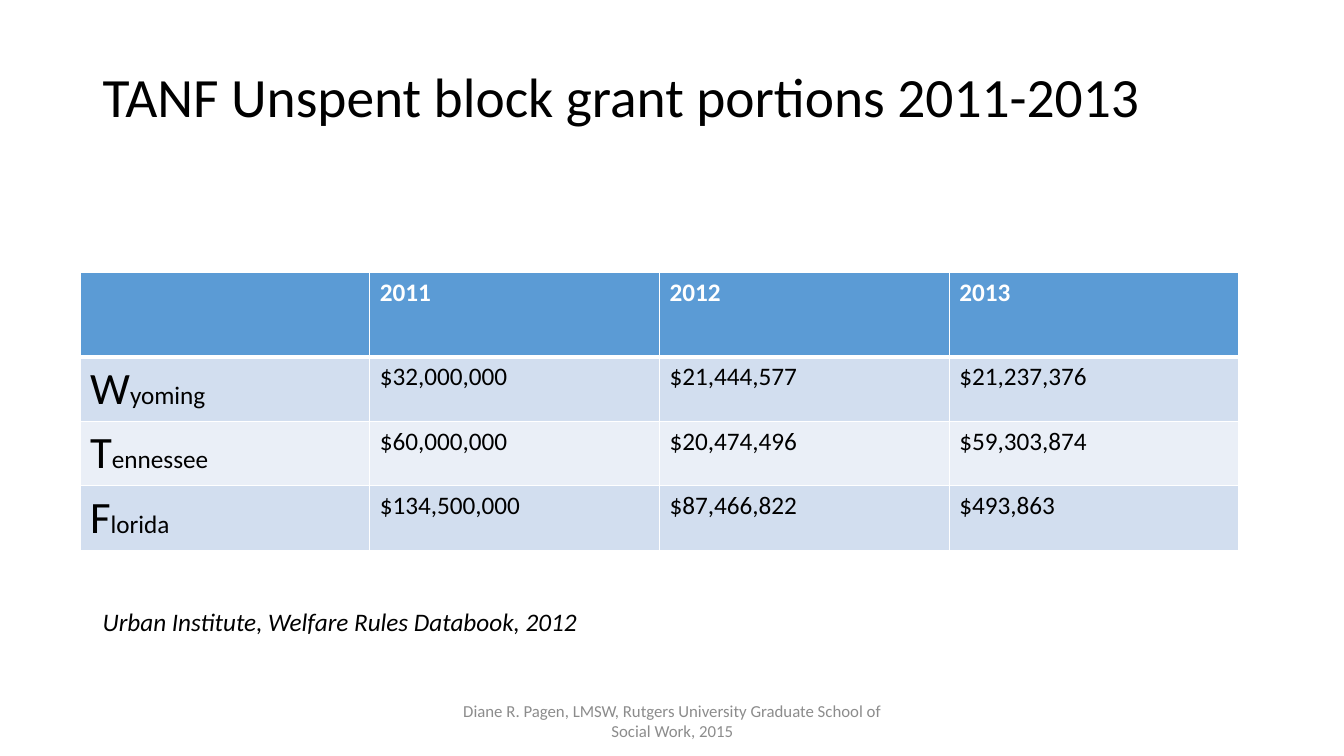
from dataclasses import dataclass

from lxml import etree
from pptx import Presentation
from pptx import util as u
from pptx.dml.color import RGBColor
from pptx.enum import text
from pptx.oxml import ns

SLIDE_WIDTH, SLIDE_HEIGHT = u.Inches(13.33), u.Inches(7.5)


@dataclass(frozen=True)
class Theme:
    font: str = "Calibri"
    ink: str = "000000"
    white: str = "FFFFFF"
    muted: str = "8C8C8C"
    header: str = "5B9BD5"
    bands: tuple = ("D2DEEF", "EAEFF7")
    title_size: float = 39.6
    initial_size: int = 32
    body_size: int = 18
    footer_size: int = 12
    thin: int = 1
    thick: int = 3


THEME = Theme()
YEARS = ("2011", "2012", "2013")
UNSPENT = {
    "Wyoming": ("$32,000,000", "$21,444,577", "$21,237,376"),
    "Tennessee": ("$60,000,000", "$20,474,496", "$59,303,874"),
    "Florida": ("$134,500,000", "$87,466,822", "$493,863"),
}
HEADER_HEIGHT, STATE_HEIGHT = u.Inches(0.84), u.Inches(0.64)


def place(left, top, width, height):
    """Turn shares of the slide into lengths."""
    return (int(left * SLIDE_WIDTH), int(top * SLIDE_HEIGHT),
            int(width * SLIDE_WIDTH), int(height * SLIDE_HEIGHT))


def set_all(target, values):
    for name, value in values.items():
        setattr(target, name, value)


def add_run(paragraph, words, size, color=THEME.ink, **styles):
    run = paragraph.add_run()
    run.text = words
    set_all(run.font, {"name": THEME.font, "size": u.Pt(size), **styles})
    run.font.color.rgb = RGBColor.from_string(color)


def add_text(slide, area, words, size, color=THEME.ink, frame=None,
             layout=None, **styles):
    """Add a one-paragraph box; frame and layout hold format values."""
    text_frame = slide.shapes.add_textbox(*place(*area)).text_frame
    set_all(text_frame, {"word_wrap": True, **(frame or {})})
    paragraph = text_frame.paragraphs[0]
    set_all(paragraph, layout or {})
    add_run(paragraph, words, size, color, **styles)


def add_borders(cell, top, bottom):
    widths = {"L": THEME.thin, "R": THEME.thin, "T": top, "B": bottom}
    properties = cell._tc.get_or_add_tcPr()
    for side, width in widths.items():
        line = etree.SubElement(properties, ns.qn(f"a:ln{side}"),
                                w=str(u.Pt(width)))
        fill = etree.SubElement(line, ns.qn("a:solidFill"))
        etree.SubElement(fill, ns.qn("a:srgbClr"), val=THEME.white)


def style_cell(cell, row):
    add_borders(cell, THEME.thick if row == 1 else THEME.thin,
                THEME.thick if row == 0 else THEME.thin)
    color = THEME.bands[(row - 1) % 2] if row else THEME.header
    cell.fill.solid()
    cell.fill.fore_color.rgb = RGBColor.from_string(color)


def write_cell(cell, words, row, column):
    """Write a heading, a state with a large initial, or an amount."""
    paragraph = cell.text_frame.paragraphs[0]
    if row == 0:
        paragraph.font.size = u.Pt(THEME.body_size)
        if words:
            add_run(paragraph, words, THEME.body_size, THEME.white, bold=True)
    elif column == 0:
        add_run(paragraph, words[0], THEME.initial_size, bold=False)
        add_run(paragraph, words[1:], THEME.body_size, bold=False)
    else:
        add_run(paragraph, words, THEME.body_size, bold=False)


def add_grant_table(slide, area):
    rows = [("", *YEARS)] + [(state, *sums) for state, sums in UNSPENT.items()]
    table = slide.shapes.add_table(len(rows), len(rows[0]), *place(*area)).table
    for row, values in enumerate(rows):
        table.rows[row].height = STATE_HEIGHT if row else HEADER_HEIGHT
        for column, words in enumerate(values):
            cell = table.cell(row, column)
            style_cell(cell, row)
            write_cell(cell, words, row, column)


def main():
    presentation = Presentation()
    set_all(presentation, {"slide_width": SLIDE_WIDTH,
                           "slide_height": SLIDE_HEIGHT})
    slide = presentation.slides.add_slide(presentation.slide_layouts[6])
    add_text(slide, (0.069, 0.053, 0.863, 0.215),
             "TANF Unspent block grant portions 2011-2013", THEME.title_size,
             frame={"margin_top": u.Inches(0.29)},
             layout={"line_spacing": 0.9})
    add_grant_table(slide, (0.0595, 0.36, 0.8625, 0.368))
    add_text(slide, (0.069, 0.756, 0.747, 0.135),
             "Urban Institute, Welfare Rules Databook, 2012", THEME.body_size,
             frame={"margin_top": u.Inches(0.35)}, italic=True)
    add_text(slide, (0.3315, 0.927, 0.3375, 0.053),
             "Diane R. Pagen, LMSW, Rutgers University Graduate School of "
             "Social Work, 2015", THEME.footer_size, THEME.muted,
             frame={"vertical_anchor": text.MSO_ANCHOR.MIDDLE},
             layout={"alignment": text.PP_ALIGN.CENTER})
    presentation.save("out.pptx")


if __name__ == "__main__":
    main()
